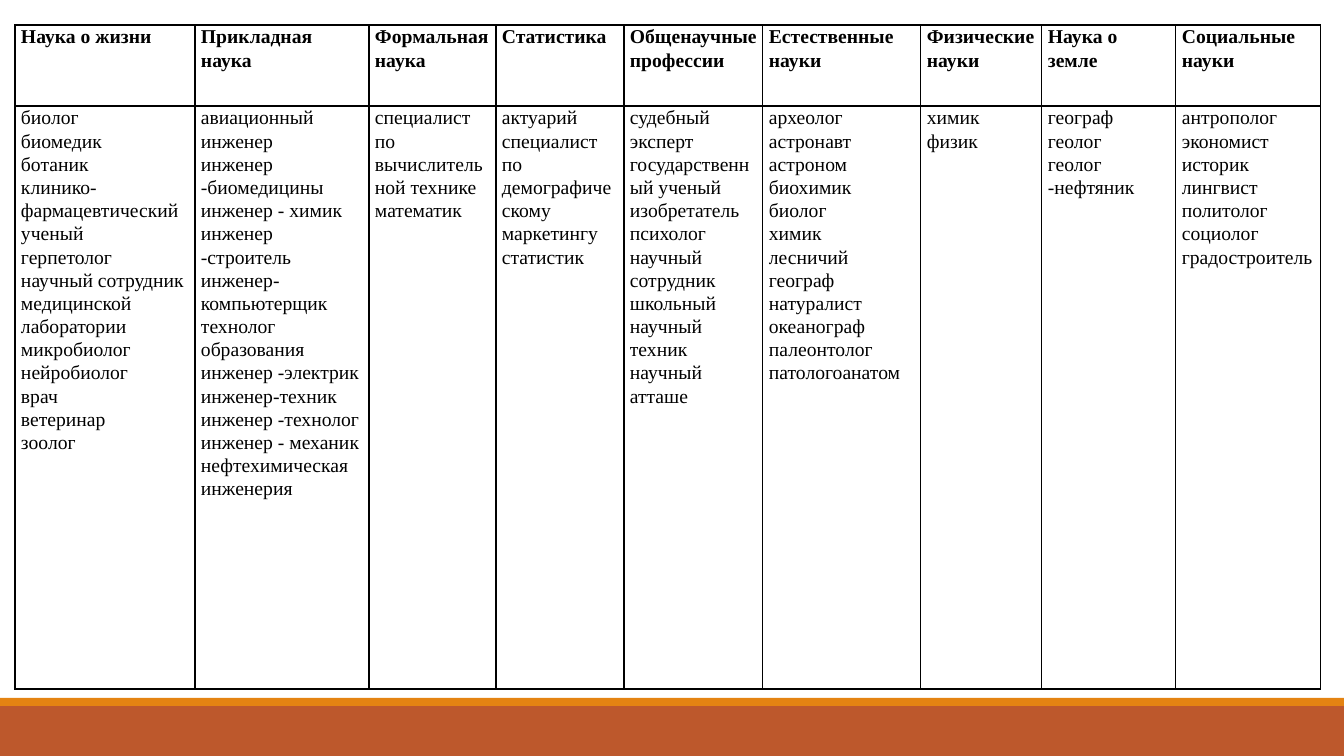
from lxml.etree import SubElement
from pptx import Presentation
from pptx.dml.color import RGBColor
from pptx.enum.shapes import MSO_SHAPE as Shape
from pptx.oxml.ns import qn
from pptx.util import Inches, Pt

PX_PER_INCH = 100.8
COLORS = {"text": "000000", "border": "000000", "band": "BD582C", "stripe": "E48312"}
FONT = "Times New Roman"
HEADER_HEIGHT, BODY_HEIGHT = 81, 583

# heading, column width in px, professions
SCIENCES = [
    ("Наука о жизни", 180, [
        "биолог", "биомедик", "ботаник", "клинико-фармацевтический ученый",
        "герпетолог", "научный сотрудник медицинской лаборатории",
        "микробиолог", "нейробиолог", "врач", "ветеринар", "зоолог"]),
    ("Прикладная наука", 174, [
        "авиационный инженер", "инженер -биомедицины", "инженер - химик",
        "инженер -строитель", "инженер-компьютерщик", "технолог образования",
        "инженер -электрик", "инженер-техник", "инженер -технолог",
        "инженер - механик", "нефтехимическая инженерия"]),
    ("Формальная наука", 127, [
        "специалист по вычислительной технике", "математик"]),
    ("Статистика", 128, [
        "актуарий", "специалист по демографическому маркетингу", "статистик"]),
    ("Общенаучные профессии", 139, [
        "судебный эксперт", "государственный ученый", "изобретатель", "психолог",
        "научный сотрудник", "школьный научный техник", "научный атташе"]),
    ("Естественные науки", 158, [
        "археолог", "астронавт", "астроном", "биохимик", "биолог", "химик",
        "лесничий", "географ", "натуралист", "океанограф", "палеонтолог",
        "патологоанатом"]),
    ("Физические науки", 121, ["химик", "физик"]),
    ("Наука о земле", 134, ["географ", "геолог", "геолог -нефтяник"]),
    ("Социальные науки", 145, [
        "антрополог", "экономист", "историк", "лингвист", "политолог",
        "социолог", "градостроитель"]),
]


def px(length):
    return Inches(length / PX_PER_INCH)


def color(name):
    return RGBColor.from_string(COLORS[name])


def add_band(slide, top, height, fill):
    """Add a full-width coloured rectangle."""
    shape = slide.shapes.add_shape(Shape.RECTANGLE, 0, px(top), px(1344), px(height))
    shape.shadow.inherit = False
    shape.fill.solid()
    shape.fill.fore_color.rgb = color(fill)
    shape.line.fill.background()


def set_borders(cell):
    properties = cell._tc.get_or_add_tcPr()
    for side in ("a:lnL", "a:lnR", "a:lnT", "a:lnB"):
        line = SubElement(properties, qn(side), w=str(Pt(1)))
        fill = SubElement(line, qn("a:solidFill"))
        SubElement(fill, qn("a:srgbClr"), val=COLORS["border"])


def fill_cell(cell, lines, bold=False):
    set_borders(cell)
    cell.fill.background()
    cell.margin_left, cell.margin_right = px(6), px(5)
    cell.margin_top = cell.margin_bottom = 0
    cell.text = "\n".join(lines)
    for paragraph in cell.text_frame.paragraphs:
        paragraph.line_spacing = 1.07
        font = paragraph.font
        font.name, font.size, font.bold = FONT, Pt(14), bold
        font.color.rgb = color("text")


def add_science_table(slide, left, top):
    width = sum(column_width for _, column_width, _ in SCIENCES)
    table = slide.shapes.add_table(2, len(SCIENCES), px(left), px(top), px(width),
                                   px(HEADER_HEIGHT + BODY_HEIGHT)).table
    table.first_row = table.horz_banding = False
    table.rows[0].height, table.rows[1].height = px(HEADER_HEIGHT), px(BODY_HEIGHT)
    for index, (heading, column_width, professions) in enumerate(SCIENCES):
        table.columns[index].width = px(column_width)
        fill_cell(table.cell(0, index), [heading], bold=True)
        fill_cell(table.cell(1, index), professions)


def main():
    presentation = Presentation()
    presentation.slide_width, presentation.slide_height = px(1344), px(756)
    slide = presentation.slides.add_slide(presentation.slide_layouts[6])
    add_band(slide, 706, 50, "band")
    add_band(slide, 698, 8, "stripe")
    add_science_table(slide, 15, 25)
    presentation.save("out.pptx")


if __name__ == "__main__":
    main()
